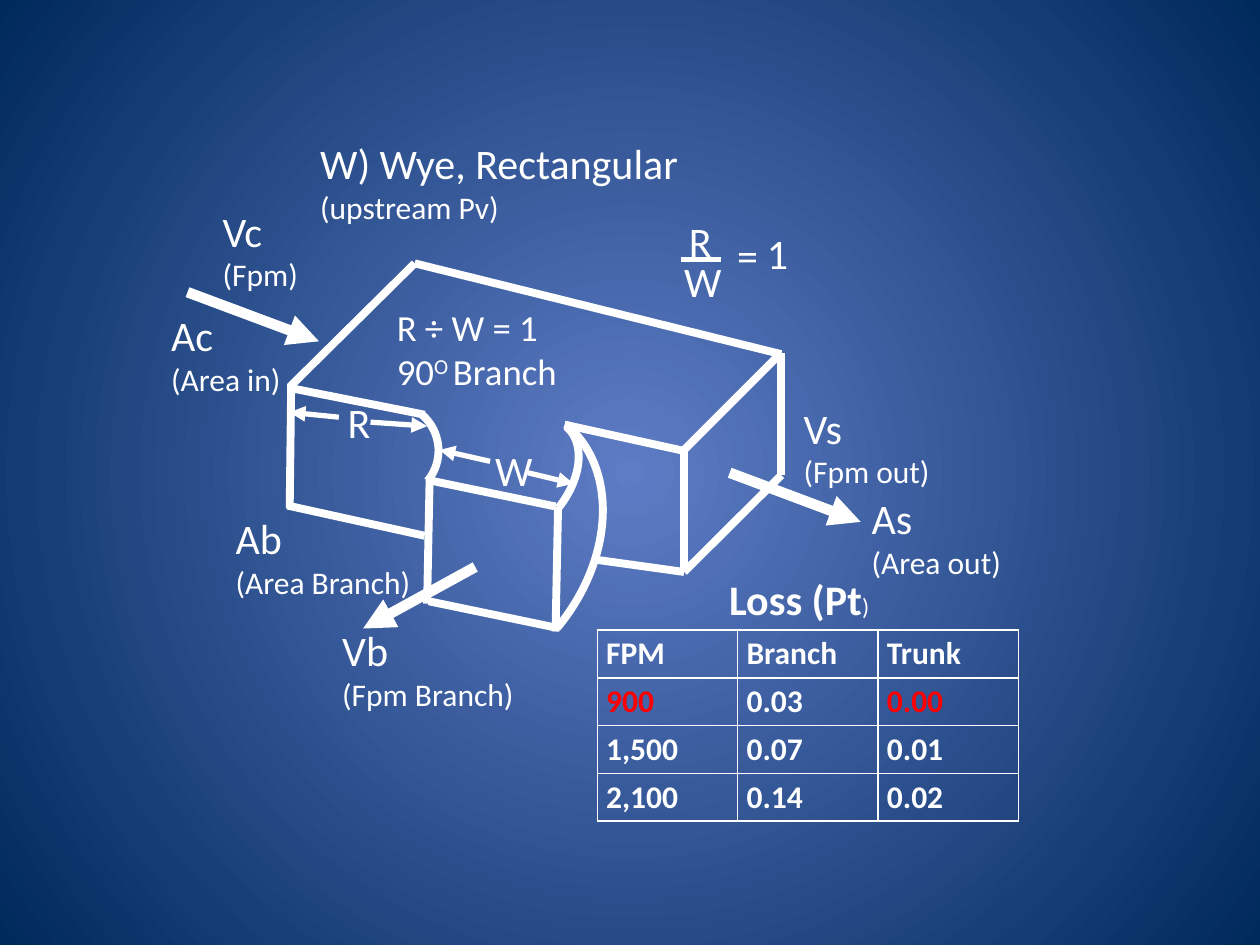
"""Build the slide on the rectangular wye duct fitting and its pressure loss table."""
from pptx import Presentation
from pptx import util as u
from pptx.dml.color import RGBColor
from pptx.enum import shapes, text
from pptx.oxml import parse_xml
from pptx.oxml.ns import nsdecls, qn

WHITE = RGBColor(0xFF, 0xFF, 0xFF)
RED = RGBColor(0xFF, 0x00, 0x00)
LIGHT_BLUE = RGBColor(0x5E, 0x7C, 0xC5)
DARK_BLUE = RGBColor(0x00, 0x29, 0x5C)


def add_run(p, words, size, color=WHITE, bold=False):
    r = p.add_run()
    r.text = words
    r.font.color.rgb = color
    for key, value in {"name": "Calibri", "size": u.Pt(size), "bold": bold}.items():
        setattr(r.font, key, value)
    return r


def fill_box(sp, lines):
    tf = sp.text_frame
    frame_format = {"word_wrap": False, "auto_size": text.MSO_AUTO_SIZE.SHAPE_TO_FIT_TEXT,
                    "vertical_anchor": text.MSO_ANCHOR.TOP}
    for key, value in frame_format.items():
        setattr(tf, key, value)
    for i, runs in enumerate(lines):
        p = tf.add_paragraph() if i else tf.paragraphs[0]
        p.alignment = text.PP_ALIGN.LEFT
        for run in runs:
            add_run(p, *run)
    return tf


prs = Presentation()
prs.slide_width, prs.slide_height = u.Cm(25.4), u.Cm(19.05)
s = prs.slides.add_slide(prs.slide_layouts[5])

fill = s.background.fill
fill.gradient()
for stop, color in zip(fill.gradient_stops, (LIGHT_BLUE, DARK_BLUE)):
    stop.color.rgb = color
lin = next(s.element.iter(qn("a:lin")))
lin.getparent().replace(lin, parse_xml(
    f'<a:path {nsdecls("a")} path="circle">'
    '<a:fillToRect l="50000" t="50000" r="50000" b="50000"/></a:path>'))

title = s.shapes.title
title_place = {"left": 6.2, "top": 2.64, "width": 8, "height": 2.06}
for key, value in title_place.items():
    setattr(title, key, u.Cm(value))
fill_box(title, [[("W) Wye, Rectangular", 24)], [("(upstream Pv)", 18)]])

duct_edges = [
    (8.36, 5.31, 15.75, 7.14), (13.79, 9.07, 15.75, 7.11),
    (13.79, 11.53, 15.75, 9.58), (15.75, 9.58, 15.75, 7.11),
    (13.79, 11.53, 13.79, 9.07), (11.99, 11.28, 13.79, 11.53),
    (5.84, 7.8, 8.36, 5.31), (11.38, 8.56, 13.79, 9.09),
    (5.84, 7.82, 8.56, 8.36), (11.2, 12.73, 11.25, 10.21),
    (8.64, 9.68, 11.2, 10.21), (8.64, 12.12, 11.2, 12.65),
    (8.61, 12.17, 8.66, 9.68), (5.84, 10.24, 5.87, 7.75),
    (5.79, 10.19, 8.56, 10.8),
]
flow_arrows = [
    (3.78, 5.89, 6.43, 6.88), (14.71, 9.53, 17.35, 10.52), (9.58, 11.43, 7.32, 12.67),
]
size_arrows = [
    (7.47, 8.51, 8.61, 8.59), (6.83, 8.41, 5.84, 8.31),
    (10.64, 9.53, 11.56, 9.75), (9.88, 9.3, 8.86, 9.07),
]
fraction_bar = [(13.72, 5.23, 14.53, 5.23)]
line_sets = [(duct_edges, 4.5, False), (flow_arrows, 6, True),
             (size_arrows, 3, True), (fraction_bar, 3, False)]
for ends, weight, arrow in line_sets:
    for points in ends:
        sp = s.shapes.add_connector(shapes.MSO_CONNECTOR.STRAIGHT, *map(u.Cm, points))
        sp.line.color.rgb = WHITE
        sp.line.width = u.Pt(weight)
        if arrow:
            sp.line._get_or_add_ln().append(
                parse_xml(f'<a:tailEnd {nsdecls("a")} type="triangle"/>'))
        sp._element.spPr.append(parse_xml(f'<a:effectLst {nsdecls("a")}/>'))

arcs = [
    ((6.93, 8.13, 1.91, 1.91), (162, 0)),
    ((9.6, 8.28, 1.85, 2.79), (162, 214.53)),
    ((6.83, 7.8, 4.98, 6.53), (162, 0)),
]
for place, angles in arcs:
    sp = s.shapes.add_shape(shapes.MSO_SHAPE.ARC, *map(u.Cm, place))
    sp.adjustments[0], sp.adjustments[1] = angles
    sp.rotation = 39.8
    sp.shadow.inherit = False
    sp.fill.background()
    sp.line.color.rgb = WHITE
    sp.line.width = u.Pt(4.5)

flow_labels = [
    (4.24, 4.01, 2.06, "Vc", "(Fpm)"),
    (15.95, 7.98, 3.1, "Vs", "(Fpm out)"),
    (3.2, 6.12, 2.74, "Ac", "(Area in)"),
    (17.32, 9.8, 3.15, "As", "(Area out)"),
    (4.5, 10.21, 4.06, "Ab", "(Area Branch)"),
    (6.65, 12.47, 4.01, "Vb", "(Fpm Branch)"),
]
symbols = [
    (6.76, 7.87, 0.97, "R"), (9.73, 8.84, 1.27, "W"),
    (13.64, 4.22, 0.97, "R"), (13.54, 5.03, 1.27, "W"),
    (14.61, 4.5, 0.94, "="), (15.21, 4.47, 0.94, "1"),
]
boxes = [((x, y, w, 2.06), [[(name, 24)], [(note, 18)]]) for x, y, w, name, note in flow_labels]
boxes += [((x, y, w, 1.27), [[(name, 24)]]) for x, y, w, name in symbols]
boxes.append(((14.45, 11.43, 3.38, 1.27), [[("Loss (Pt", 24, WHITE, True), (")", 13.5)]]))
boxes.append(((7.75, 6.02, 3.81, 2.06),
              [[("R ÷ W = 1", 21)], [("90", 21), ("O ", 21), ("Branch", 21)]]))
for place, lines in boxes:
    tf = fill_box(s.shapes.add_textbox(*map(u.Cm, place)), lines)
tf.paragraphs[1].runs[1].font._element.set("baseline", "30000")

rows = [
    ("FPM", "Branch", "Trunk"),
    ("900", "0.03", "0.00"),
    ("1,500", "0.07", "0.01"),
    ("2,100", "0.14", "0.02"),
]
table = s.shapes.add_table(4, 3, *map(u.Cm, (12.04, 12.7, 8.49, 3.81))).table
table.first_row = table.horz_banding = False
margins = {"margin_left": 0.18, "margin_right": 0.18, "margin_top": 0.1, "margin_bottom": 0.1}
for i, row in enumerate(rows):
    for j, words in enumerate(row):
        cell = table.cell(i, j)
        for key, value in margins.items():
            setattr(cell, key, u.Cm(value))
        color = RED if words in ("900", "0.00") else WHITE
        add_run(cell.text_frame.paragraphs[0], words, 18, color, True)
        for side in "LRTB":
            cell._tc.get_or_add_tcPr().append(parse_xml(
                f'<a:ln{side} {nsdecls("a")} w="12700"><a:solidFill>'
                f'<a:srgbClr val="{WHITE}"/></a:solidFill></a:ln{side}>'))
        cell.fill.background()

prs.save("out.pptx")
